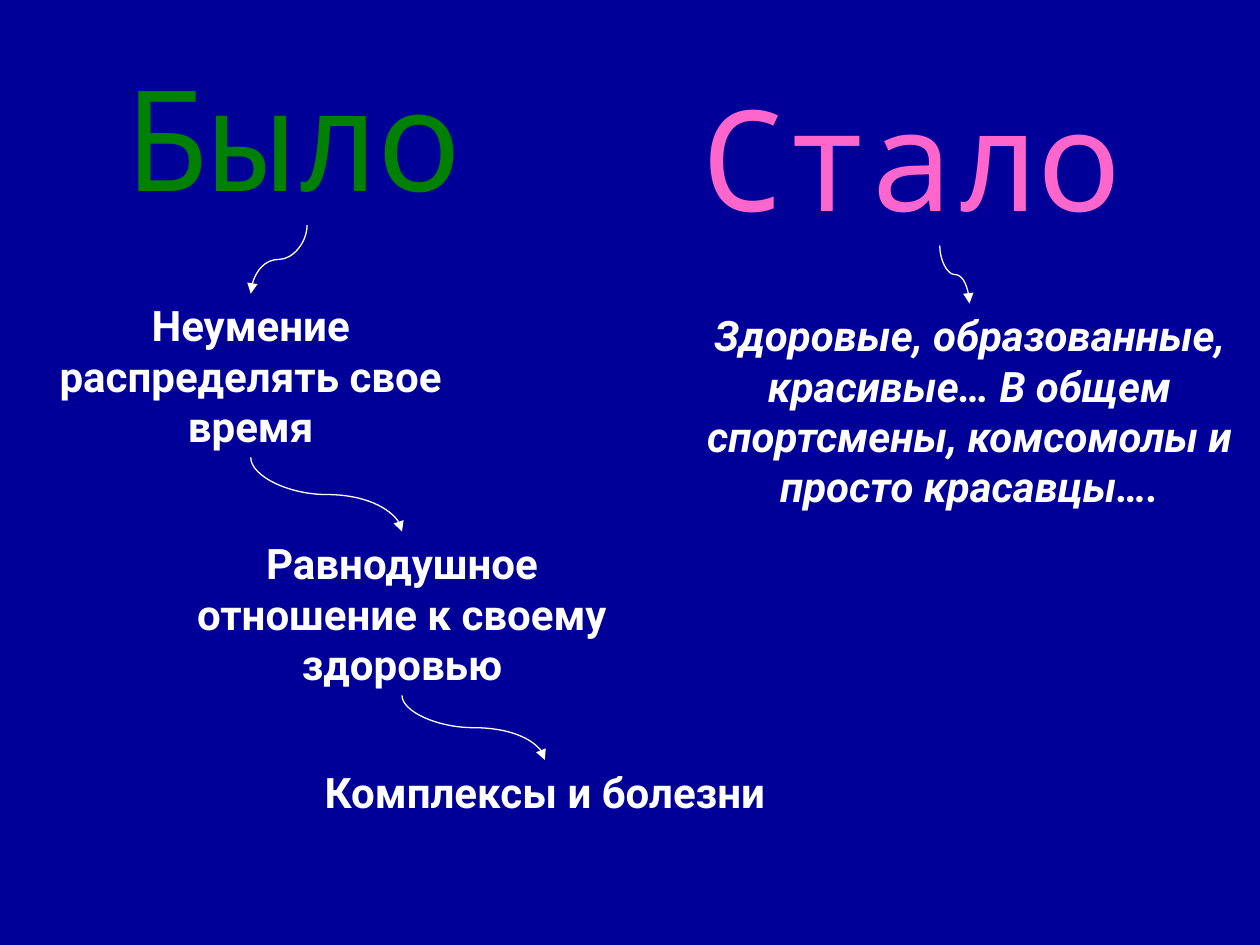
import pptx
import pptx.dml.color
import pptx.enum.dml
import pptx.enum.shapes
import pptx.enum.text
import pptx.oxml
import pptx.oxml.ns
import pptx.util

Cm = pptx.util.Cm
Pt = pptx.util.Pt
NAVY = pptx.dml.color.RGBColor(0x00, 0x00, 0x99)
GREEN = pptx.dml.color.RGBColor(0x00, 0x80, 0x00)
PINK = pptx.dml.color.RGBColor(0xFF, 0x66, 0xCC)
WHITE = pptx.dml.color.RGBColor(0xFF, 0xFF, 0xFF)

LEFT = pptx.enum.text.PP_ALIGN.LEFT
CENTER = pptx.enum.text.PP_ALIGN.CENTER
HEADING = {"name": "Noto Sans Mono", "size": Pt(80)}
BODY = {"name": "Roboto", "size": Pt(24), "bold": True}

presentation = pptx.Presentation()
presentation.slide_width = Cm(25.4)
presentation.slide_height = Cm(19.05)
slide = presentation.slides.add_slide(presentation.slide_layouts[6])
slide.background.fill.solid()
slide.background.fill.fore_color.rgb = NAVY

# name: (text, left, top, width, height in cm, alignment, colour, font format)
texts = {
    "before": ("Было", 2.29, 0.91, 7.8, 3.63, LEFT, GREEN, HEADING),
    "after": ("Стало", 13.89, 1.32, 10.11, 3.63, LEFT, PINK, HEADING),
    "time": ("Неумение распределять свое время",
             0, 5.92, 10.11, 3.3, CENTER, WHITE, BODY),
    "indifference": ("Равнодушное отношение к своему здоровью",
                     3.1, 10.72, 10.01, 3.3, CENTER, WHITE, BODY),
    "illness": ("Комплексы и болезни",
                5.69, 15.32, 10.59, 1.27, CENTER, WHITE, BODY),
    "healthy": ("Здоровые, образованные, красивые… В общем спортсмены, "
                "комсомолы и просто красавцы….",
                13.69, 6.12, 11.71, 5.33, CENTER, WHITE, BODY | {"italic": True}),
}

boxes = {}
for name, (text, left, top, width, height, alignment, color, font) in texts.items():
    box = slide.shapes.add_textbox(Cm(left), Cm(top), Cm(width), Cm(height))
    box.text_frame.word_wrap = True
    box.text_frame.auto_size = pptx.enum.text.MSO_AUTO_SIZE.SHAPE_TO_FIT_TEXT
    paragraph = box.text_frame.paragraphs[0]
    paragraph.alignment = alignment
    run = paragraph.add_run()
    run.text = text
    run.font.color.rgb = color
    for attribute, value in font.items():
        setattr(run.font, attribute, value)
    boxes[name] = box

links = [("before", "time"), ("time", "indifference"),
         ("indifference", "illness"), ("after", "healthy")]

for upper_name, lower_name in links:
    upper, lower = boxes[upper_name], boxes[lower_name]
    start_x = upper.left + upper.width // 2
    start_y = upper.top + upper.height
    end_x = lower.left + lower.width // 2
    run_x, run_y = end_x - start_x, lower.top - start_y

    # A curve that leaves downwards is a sideways curve turned by a quarter,
    # so its width is the vertical distance and its height the horizontal one.
    left = (start_x + end_x - run_y) // 2
    top = (start_y + lower.top - abs(run_x)) // 2
    connector = slide.shapes.add_connector(
        pptx.enum.shapes.MSO_CONNECTOR.CURVE,
        left, top, left + run_y, top + abs(run_x))
    transform = connector.element.spPr.find(pptx.oxml.ns.qn("a:xfrm"))
    if run_x > 0:
        transform.set("rot", str(270 * 60000))
        transform.set("flipH", "1")
    else:
        transform.set("rot", str(90 * 60000))

    connector.line.color.rgb = WHITE
    connector.line.width = Pt(0.75)
    line = connector.line.fill and connector.element.spPr.find(pptx.oxml.ns.qn("a:ln"))
    namespace = pptx.oxml.ns.nsdecls("a")
    line.append(pptx.oxml.parse_xml(f'<a:tailEnd {namespace} type="triangle"/>'))
    connector.element.spPr.append(pptx.oxml.parse_xml(f"<a:effectLst {namespace}/>"))

presentation.save("out.pptx")
